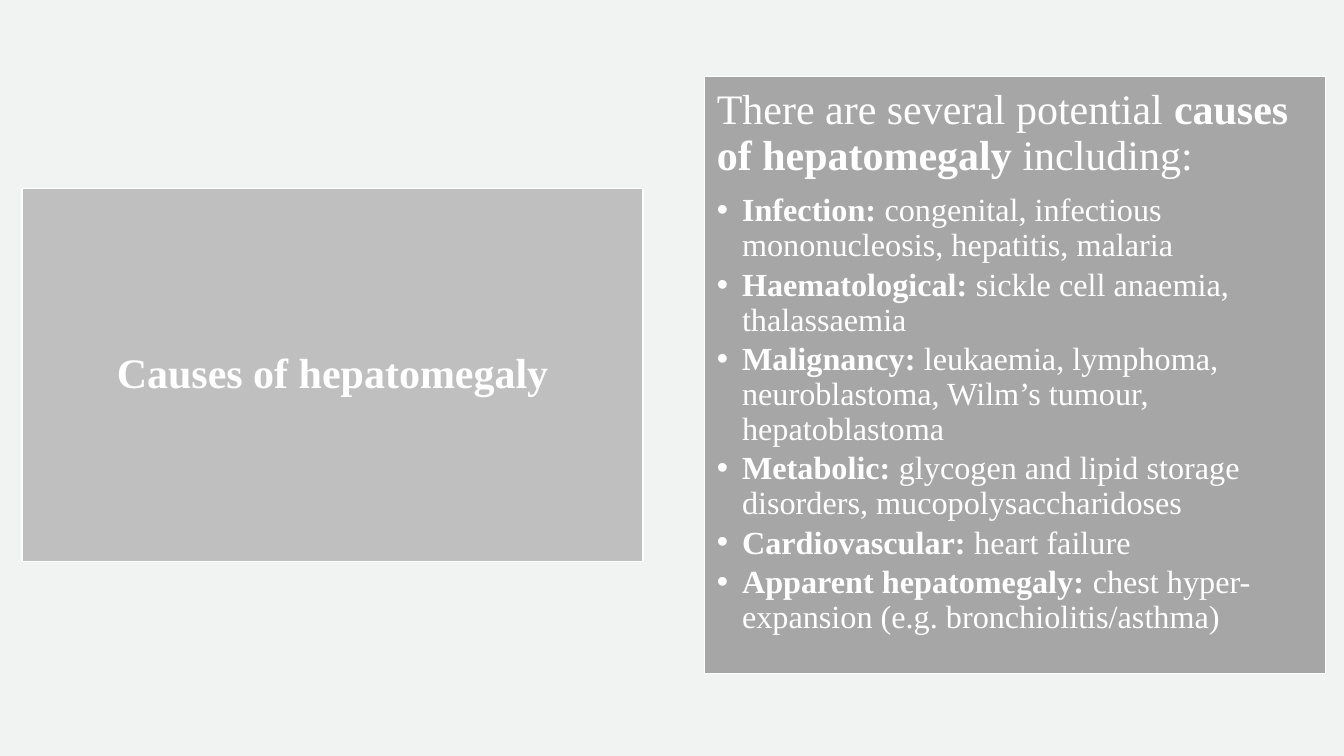
from lxml.etree import SubElement
from pptx import Presentation
from pptx.dml.color import RGBColor
from pptx.enum.shapes import MSO_SHAPE as Shape
from pptx.enum.text import MSO_ANCHOR as Anchor, PP_ALIGN as Align
from pptx.oxml.ns import qn
from pptx.util import Inches, Pt

COLORS = {"page": "F0F3F1", "title": "BFBFBF", "causes": "A6A6A6", "light": "FFFFFF"}
FONT = "Times New Roman"
HEADING_SIZE, CAUSE_SIZE = 30, 23
CAUSES = [
    ("Infection: ", "congenital, infectious mononucleosis, hepatitis, malaria"),
    ("Haematological:", " sickle cell anaemia, thalassaemia"),
    ("Malignancy: ", "leukaemia, lymphoma, neuroblastoma, Wilm’s tumour, hepatoblastoma"),
    ("Metabolic: ", "glycogen and lipid storage disorders, mucopolysaccharidoses"),
    ("Cardiovascular: ", "heart failure"),
    ("Apparent hepatomegaly: ", "chest hyper-expansion (e.g. bronchiolitis/asthma)"),
]


def rgb(name):
    return RGBColor.from_string(COLORS[name])


def set_all(target, values):
    for name, value in values.items():
        setattr(target, name, value)


def add_panel(page, box, color, anchor):
    """Draw a filled rectangle and return its text frame."""
    panel = page.shapes.add_shape(Shape.RECTANGLE, *map(Inches, box))
    panel.shadow.inherit = False
    panel.fill.solid()
    panel.fill.fore_color.rgb = rgb(color)
    panel.line.color.rgb = rgb("light")
    panel.line.width = Pt(1)
    frame = panel.text_frame
    sides = ("left", "top", "right", "bottom")
    set_all(frame, {f"margin_{side}": Inches(0.12) for side in sides})
    set_all(frame, {"word_wrap": True, "vertical_anchor": anchor})
    return frame


def write_para(para, spans, size, space, align=Align.LEFT):
    """Write (text, bold) spans; space is the gap after, as a share of size."""
    set_all(para, {"alignment": align, "line_spacing": 0.9, "space_after": Pt(size * space)})
    for text, bold in spans:
        span = para.add_run()
        span.text = text
        set_all(span.font, {"name": FONT, "size": Pt(size), "bold": bold})
        span.font.color.rgb = rgb("light")


def add_bullet(para):
    props = para._p.get_or_add_pPr()
    props.set("marL", str(Inches(0.25)))
    props.set("indent", str(-Inches(0.25)))
    SubElement(props, qn("a:buFont"), typeface="Arial")
    SubElement(props, qn("a:buChar"), char="•")


def add_title_panel(page, box):
    frame = add_panel(page, box, "title", Anchor.MIDDLE)
    spans = [("Causes of hepatomegaly", True)]
    write_para(frame.paragraphs[0], spans, HEADING_SIZE, 0.35, Align.CENTER)


def add_causes_panel(page, box):
    frame = add_panel(page, box, "causes", Anchor.TOP)
    intro = [
        ("There are several potential", False),
        (" causes of hepatomegaly", True),
        (" including:", False),
    ]
    write_para(frame.paragraphs[0], intro, HEADING_SIZE, 0.35)
    for label, examples in CAUSES:
        para = frame.add_paragraph()
        para.level = 1
        write_para(para, [(label, True), (examples, False)], CAUSE_SIZE, 0.15)
        add_bullet(para)


def main():
    deck = Presentation()
    set_all(deck, {"slide_width": Inches(13.33), "slide_height": Inches(7.5)})
    page = deck.slides.add_slide(deck.slide_layouts[6])
    page.background.fill.solid()
    page.background.fill.fore_color.rgb = rgb("page")
    add_title_panel(page, (0.22, 1.87, 6.16, 3.7))
    add_causes_panel(page, (6.99, 0.76, 6.16, 5.92))
    deck.save("out.pptx")


if __name__ == "__main__":
    main()
